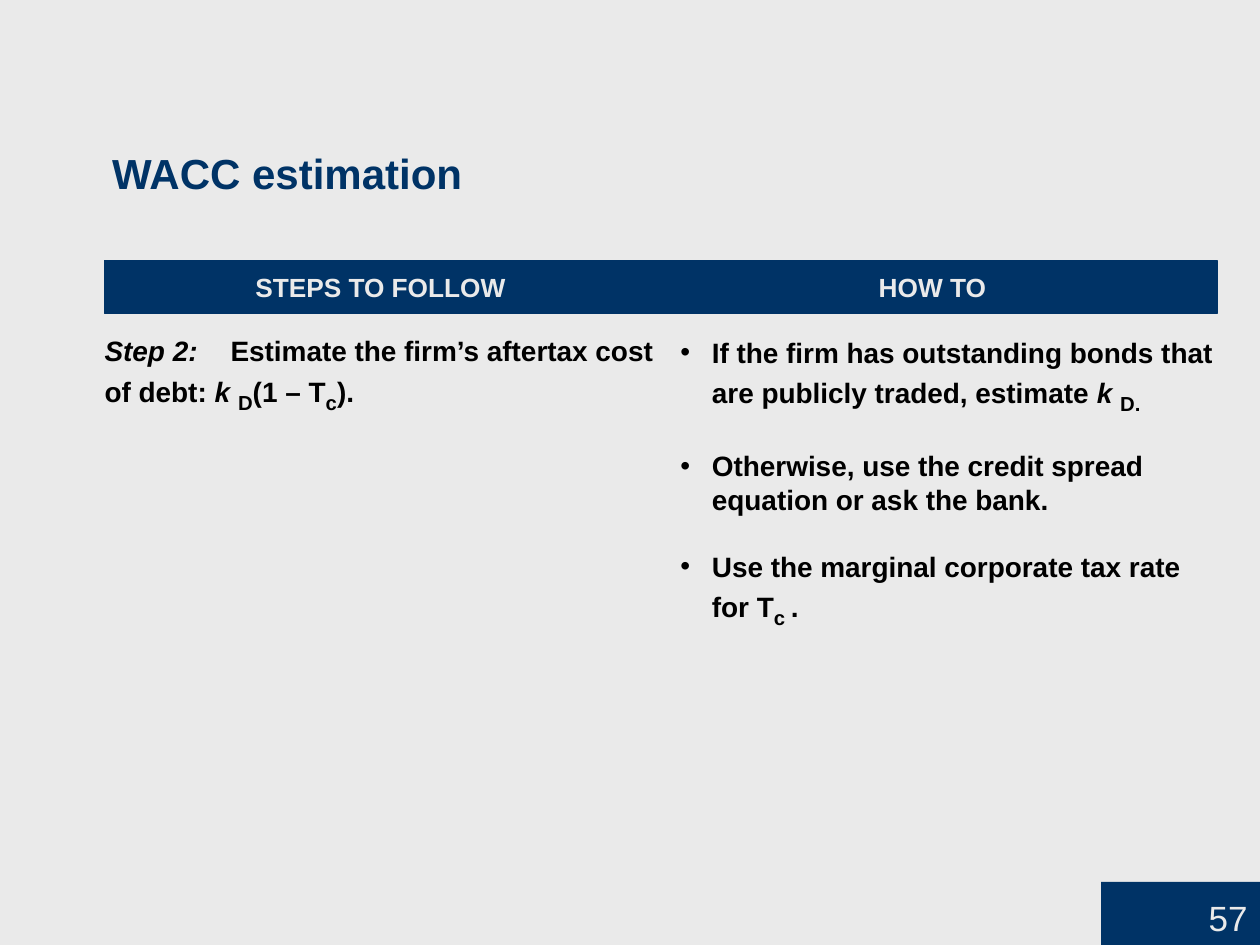
import pptx
import pptx.dml.color
import pptx.enum.shapes
import pptx.enum.text
import pptx.oxml.ns
import pptx.util
from lxml import etree

Inches, Pt = pptx.util.Inches, pptx.util.Pt
Align, Anchor = pptx.enum.text.PP_ALIGN, pptx.enum.text.MSO_ANCHOR

# Content: body paragraphs are lists of (text, style) runs
TITLE = "WACC estimation"
HEADINGS = ["STEPS TO FOLLOW", "HOW TO"]
STEP = [
    [("Step 2:", "italic"), ("\tEstimate the firm’s aftertax cost \vof debt: ", ""),
     ("k ", "italic"), ("D", "sub"), ("(1 – T", ""), ("c", "sub"), (").", "")],
]
HOW_TO = [
    [("If the firm has outstanding bonds that are publicly traded, estimate ", ""),
     ("k ", "italic"), ("D.", "sub")],
    [("Otherwise, use the credit spread equation or ask the bank.", "")],
    [("Use the marginal corporate tax rate \vfor T", ""), ("c ", "sub"), (".", "")],
]
PAGE = "57"

THEME = {
    "font": "Arial", "navy": "003366", "pale": "EAEAEA", "black": "000000",
    "title": 24, "heading": 15, "body": 16, "sub": 20, "page": 20,
}

# Layout in inches
WIDTH, HEIGHT = 10, 7.5
LEFT, COLUMN = 0.83, 4.38
TITLE_BOX = (0.79, 1.12, 4.72, 0.5)
BAR = (LEFT, 2.07, 8.83, 0.42)
HEADING_TOP, HEADING_HEIGHT = 2.15, 0.25
STEP_BOX = (LEFT, 2.65, 4.42, 1.12)
HOW_TO_BOX = (5.4, 2.66, 4.27, 2.49)
PAGE_BOX = (WIDTH - 1.26, HEIGHT - 0.5, 1.26, 0.5)
STEP_TAB, BULLET_INDENT = 0.99, 0.25


def color(name):
    return pptx.dml.color.RGBColor.from_string(THEME[name])


def place(shape, box):
    shape.left, shape.top, shape.width, shape.height = map(Inches, box)


def set_font(paragraph, size, color_name, bold=True):
    font = paragraph.font
    font.name, font.size, font.bold = THEME["font"], Pt(THEME[size]), bold
    font.color.rgb = color(color_name)


def clear_insets(frame):
    frame.margin_left = frame.margin_top = frame.margin_right = frame.margin_bottom = 0
    frame.vertical_anchor = Anchor.TOP
    frame.auto_size = pptx.enum.text.MSO_AUTO_SIZE.NONE
    frame.word_wrap = True


def add_child(parent, tag, **attributes):
    child = etree.SubElement(parent, pptx.oxml.ns.qn(tag))
    for name, value in attributes.items():
        child.set(name, str(value))
    return child


def set_layout(paragraph, tab=None, bullet=False):
    properties = paragraph._p.get_or_add_pPr()
    indent = Inches(BULLET_INDENT) if bullet else 0
    properties.set("marL", str(indent))
    properties.set("indent", str(-indent))
    if bullet:
        add_child(properties, "a:buFont", typeface=THEME["font"])
        add_child(properties, "a:buChar", char="•")
    else:
        add_child(properties, "a:buNone")
    if tab:
        add_child(add_child(properties, "a:tabLst"), "a:tab", pos=Inches(tab), algn="l")


def fill_body(placeholder, box, paragraphs, tab=None, bullet=False):
    place(placeholder, box)
    frame = placeholder.text_frame
    clear_insets(frame)
    for index, runs in enumerate(paragraphs):
        paragraph = frame.paragraphs[0] if index == 0 else frame.add_paragraph()
        paragraph.line_spacing = 1.0
        paragraph.space_before = Pt(19 if index else 0)
        set_layout(paragraph, tab, bullet)
        set_font(paragraph, "body", "black")
        for text, style in runs:
            for part_index, part in enumerate(text.split("\v")):
                if part_index:
                    paragraph.add_line_break()
                run = paragraph.add_run()
                run.text = part
                if style == "italic":
                    run.font.italic = True
                elif style == "sub":
                    run.font.size = Pt(THEME["sub"])
                    run._r.get_or_add_rPr().set("baseline", "-22000")


def add_block(slide, box):
    block = slide.shapes.add_shape(
        pptx.enum.shapes.MSO_SHAPE.RECTANGLE, *map(Inches, box))
    block.shadow.inherit = False
    block.fill.solid()
    block.fill.fore_color.rgb = color("navy")
    return block


presentation = pptx.Presentation()
presentation.slide_width, presentation.slide_height = Inches(WIDTH), Inches(HEIGHT)
slide = presentation.slides.add_slide(presentation.slide_layouts.get_by_name("Two Content"))
slide.background.fill.solid()
slide.background.fill.fore_color.rgb = color("pale")
title, step, how_to = slide.placeholders

# Title
place(title, TITLE_BOX)
title.text_frame.text = TITLE
title.text_frame.auto_size = pptx.enum.text.MSO_AUTO_SIZE.NONE
title.text_frame.paragraphs[0].alignment = Align.LEFT
set_font(title.text_frame.paragraphs[0], "title", "navy")

# Heading bar, with one centred heading per column
bar = add_block(slide, BAR)
bar.line.color.rgb = color("navy")
bar.line.width = Pt(0.75)
for index, text in enumerate(HEADINGS):
    box = (LEFT + index * COLUMN, HEADING_TOP, COLUMN, HEADING_HEIGHT)
    heading = slide.shapes.add_textbox(*map(Inches, box))
    clear_insets(heading.text_frame)
    paragraph = heading.text_frame.paragraphs[0]
    paragraph.text = text
    paragraph.alignment = Align.CENTER
    set_font(paragraph, "heading", "pale")

# Columns
fill_body(step, STEP_BOX, STEP, tab=STEP_TAB)
fill_body(how_to, HOW_TO_BOX, HOW_TO, bullet=True)

# Page number
page = add_block(slide, PAGE_BOX)
page.line.fill.background()
page.text_frame.text = PAGE
page.text_frame.vertical_anchor = Anchor.BOTTOM
page.text_frame.paragraphs[0].alignment = Align.RIGHT
set_font(page.text_frame.paragraphs[0], "page", "pale", bold=False)

presentation.save("out.pptx")
